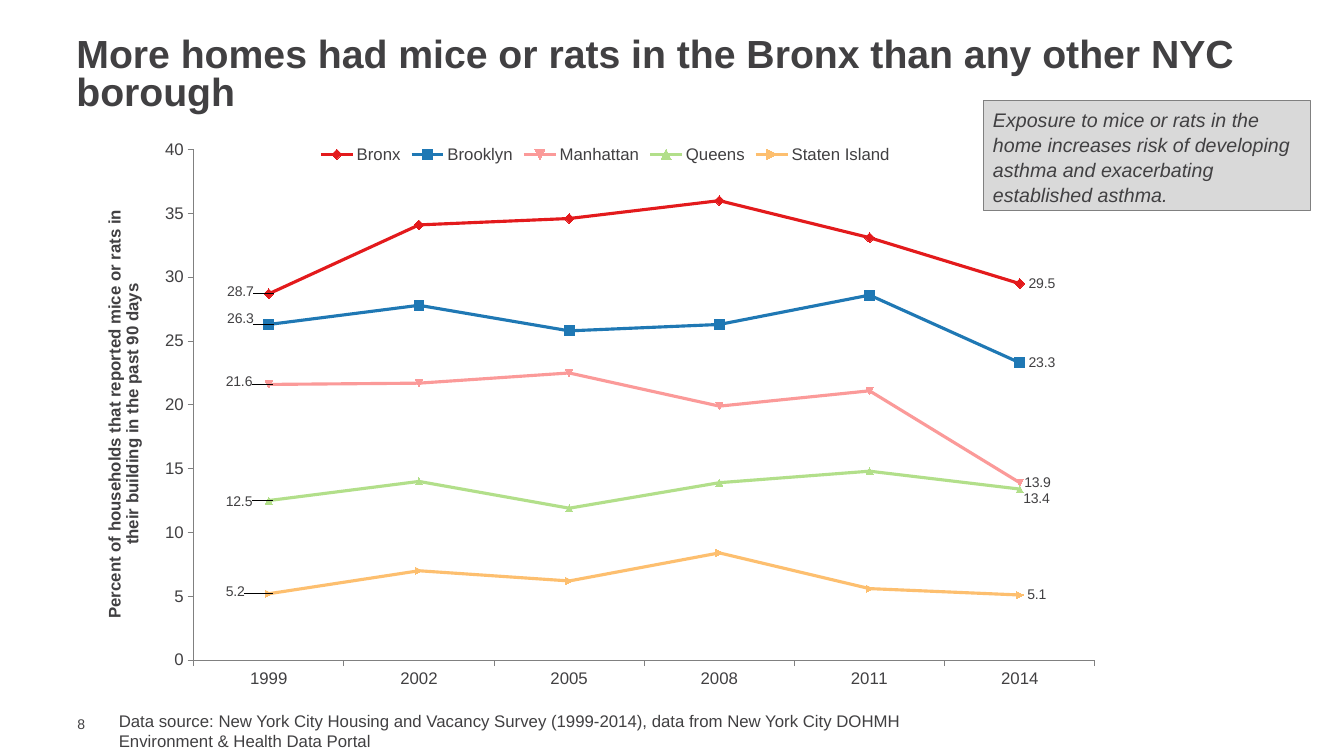
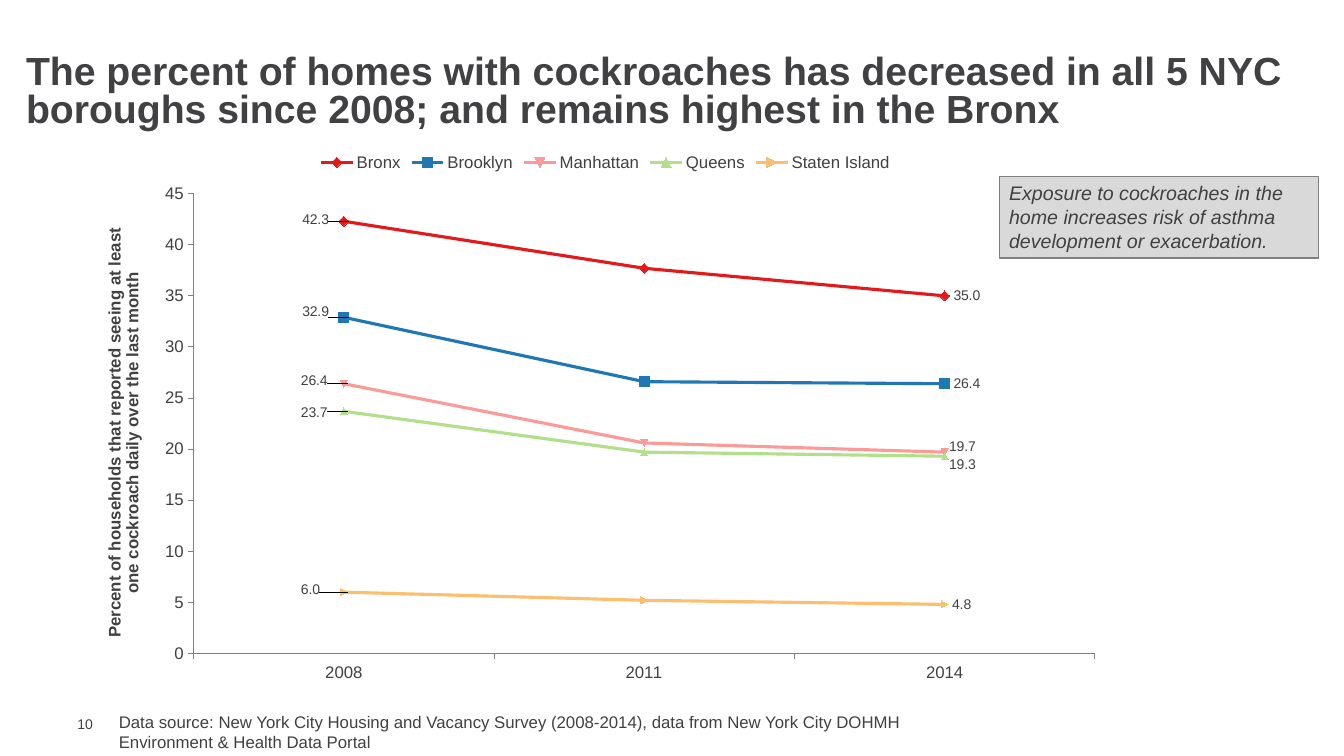
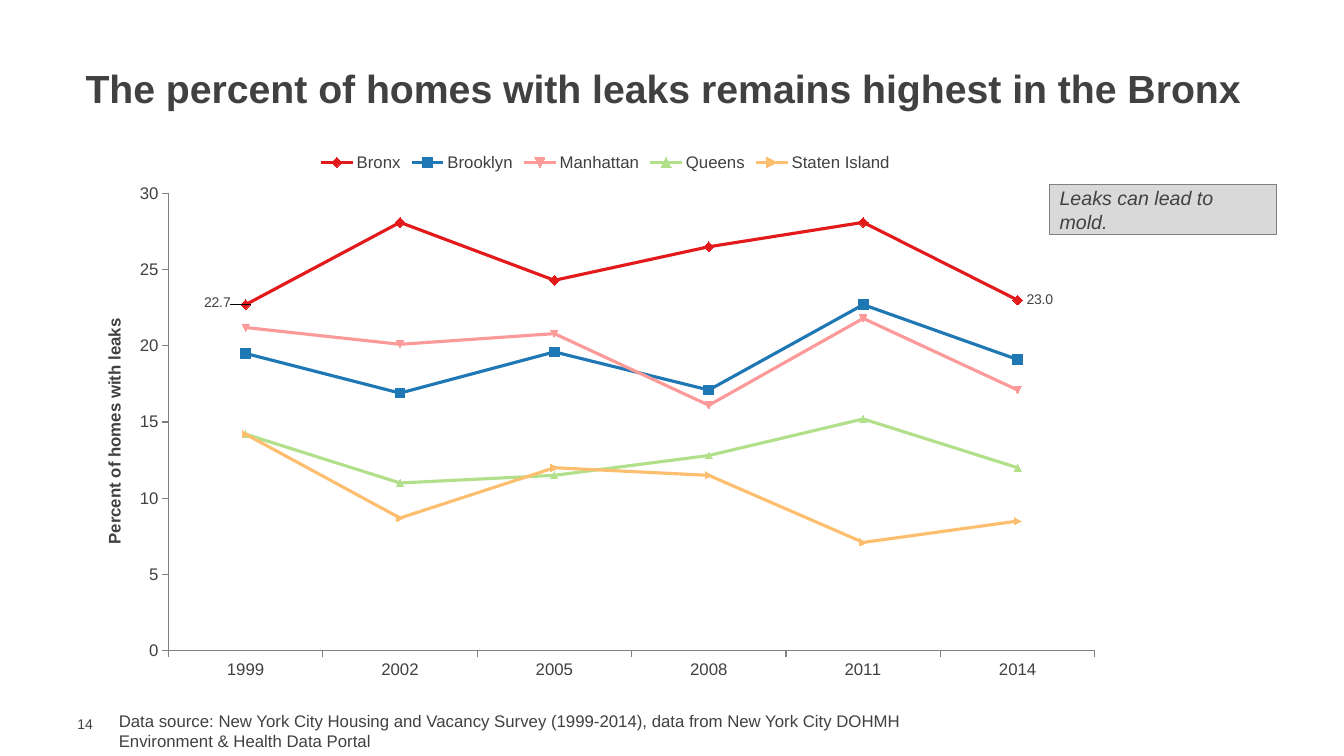
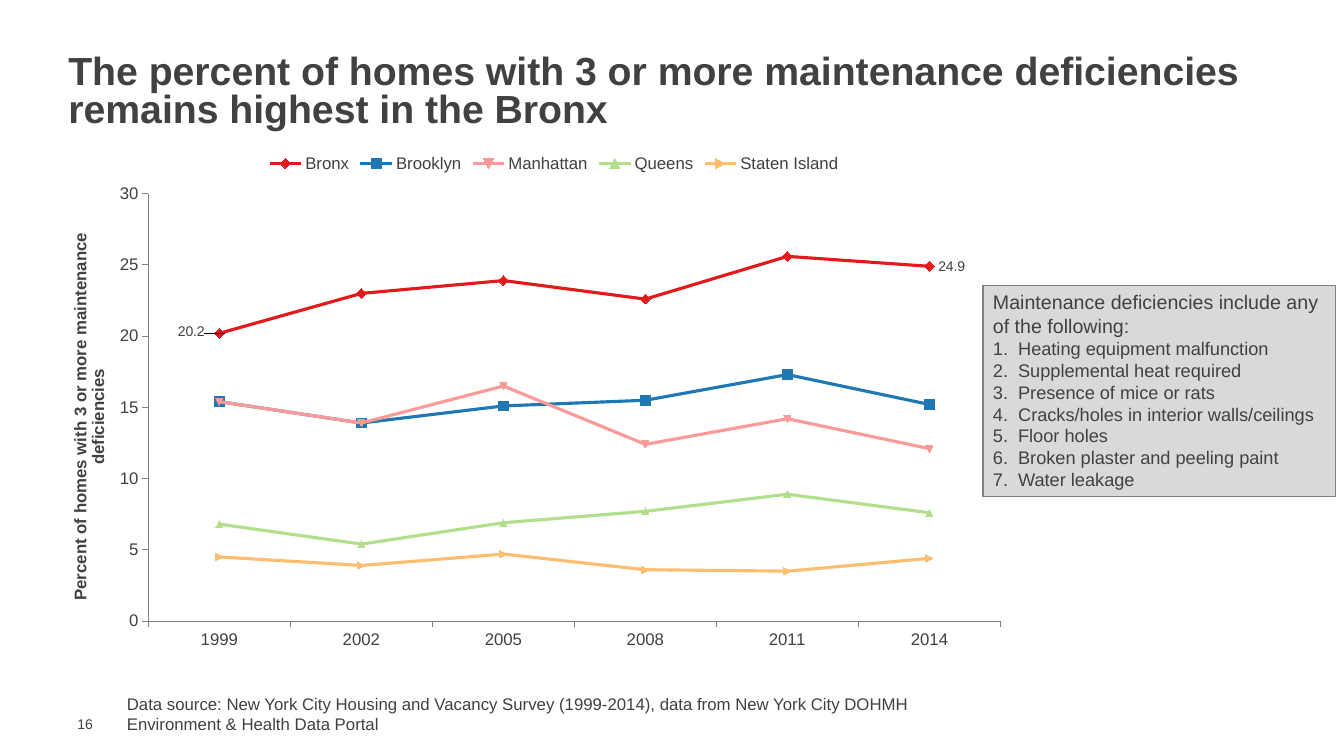
"""Build four line-chart slides on housing conditions in New York City boroughs."""
from dataclasses import dataclass
from typing import Any

import lxml.etree
import pptx
import pptx.chart.data
import pptx.dml.color
import pptx.enum.chart
import pptx.enum.shapes
import pptx.enum.text
import pptx.oxml
import pptx.oxml.ns
import pptx.util

EMU_PER_PX = 9144
FONT = "Arial"
TEXT = "414042"
PANEL = "D9D9D9"
RULE = "808080"
TOP = pptx.enum.text.MSO_ANCHOR.TOP
MIDDLE = pptx.enum.text.MSO_ANCHOR.MIDDLE
MARKER = pptx.enum.chart.XL_MARKER_STYLE
LONG_YEARS = ("1999", "2002", "2005", "2008", "2011", "2014")


@dataclass(frozen=True)
class Box:
    left: int
    top: int
    width: int
    height: int


@dataclass(frozen=True)
class Borough:
    name: str
    color: str
    marker: Any = MARKER.AUTOMATIC
    marker_size: int = 5


@dataclass(frozen=True)
class LabelShift:
    first_y: int = -2
    last_x: int = 0
    last_y: int = 0


@dataclass(frozen=True)
class LineChart:
    box: Box
    plot: tuple[float, float, float, float]
    axis_title: str
    maximum: int
    years: tuple[str, ...]
    values: tuple[tuple[float, ...], ...]
    labels: tuple[LabelShift, ...]


@dataclass(frozen=True)
class Callout:
    box: Box
    text: str
    items: tuple[str, ...] = ()
    italic: bool = True
    anchor: Any = TOP
    line_spacing: Any = None


@dataclass(frozen=True)
class Page:
    number: int
    title: str
    title_box: Box
    chart: LineChart
    source_box: Box
    callout: Callout


BOROUGHS = (
    Borough("Bronx", "E31A1C", MARKER.DIAMOND, 7),
    Borough("Brooklyn", "1F78B4", MARKER.SQUARE, 7),
    Borough("Manhattan", "FB9A99"),
    Borough("Queens", "B2DF8A"),
    Borough("Staten Island", "FDBF6F"),
)

PAGES = (
    Page(
        8,
        "More homes had mice or rats in the Bronx than any other NYC borough",
        Box(66, 33, 1217, 85),
        LineChart(
            Box(100, 133, 1001, 553),
            (0.092, 0.028, 0.893, 0.916),
            "Percent of households that reported mice or rats in their building in the past 90 days",
            40,
            LONG_YEARS,
            (
                (28.7, 34.1, 34.6, 36, 33.1, 29.5),
                (26.3, 27.8, 25.8, 26.3, 28.6, 23.3),
                (21.6, 21.7, 22.5, 19.9, 21.1, 13.9),
                (12.5, 14, 11.9, 13.9, 14.8, 13.4),
                (5.2, 7, 6.2, 8.4, 5.6, 5.1),
            ),
            (
                LabelShift(),
                LabelShift(-6),
                LabelShift(-3, -3, 0),
                LabelShift(1, -4, 10),
                LabelShift(),
            ),
        ),
        Box(108, 700, 992, 50),
        Callout(
            Box(975, 100, 325, 109),
            "Exposure to mice or rats in the home increases risk of developing asthma "
            "and exacerbating established asthma.",
            line_spacing=pptx.util.Pt(18),
        ),
    ),
    Page(
        10,
        "The percent of homes with cockroaches has decreased in all 5 NYC boroughs "
        "since 2008; and remains highest in the Bronx",
        Box(16, 50, 1317, 85),
        LineChart(
            Box(100, 141, 1001, 545),
            (0.092, 0.094, 0.893, 0.837),
            "Percent of households that reported seeing at least one cockroach daily over the last month",
            45,
            LONG_YEARS[3:],
            (
                (42.3, 37.7, 35),
                (32.9, 26.6, 26.4),
                (26.4, 20.6, 19.7),
                (23.7, 19.7, 19.3),
                (6, 5.2, 4.8),
            ),
            (
                LabelShift(),
                LabelShift(-6),
                LabelShift(-3, -3, -5),
                LabelShift(1, -3, 8),
                LabelShift(),
            ),
        ),
        Box(108, 701, 992, 50),
        Callout(
            Box(991, 175, 317, 81),
            "Exposure to cockroaches in the home increases risk of asthma "
            "development or exacerbation.",
        ),
    ),
    Page(
        14,
        "The percent of homes with leaks remains highest in the Bronx",
        Box(75, 67, 1317, 48),
        LineChart(
            Box(100, 141, 1001, 542),
            (0.067, 0.094, 0.918, 0.837),
            "Percent of homes with leaks",
            30,
            LONG_YEARS,
            (
                (22.7, 28.1, 24.3, 26.5, 28.1, 23),
                (19.5, 16.9, 19.6, 17.1, 22.7, 19.1),
                (21.2, 20.1, 20.8, 16.1, 21.8, 17.1),
                (14.2, 11, 11.5, 12.8, 15.2, 12),
                (14.2, 8.7, 12, 11.5, 7.1, 8.5),
            ),
            (LabelShift(),),
        ),
        Box(108, 700, 992, 50),
        Callout(Box(1041, 183, 225, 50), "Leaks can lead to mold.", anchor=MIDDLE),
    ),
    Page(
        16,
        "The percent of homes with 3 or more maintenance deficiencies remains highest in the Bronx",
        Box(58, 50, 1317, 85),
        LineChart(
            Box(66, 142, 967, 534),
            (0.084, 0.094, 0.874, 0.794),
            "Percent of homes with 3 or more maintenance deficiencies",
            30,
            LONG_YEARS,
            (
                (20.2, 23, 23.9, 22.6, 25.6, 24.9),
                (15.4, 13.9, 15.1, 15.5, 17.3, 15.2),
                (15.4, 13.9, 16.5, 12.4, 14.2, 12.1),
                (6.8, 5.4, 6.9, 7.7, 8.9, 7.6),
                (4.5, 3.9, 4.7, 3.6, 3.5, 4.4),
            ),
            (LabelShift(),),
        ),
        Box(116, 683, 1017, 50),
        Callout(
            Box(975, 283, 350, 210),
            "Maintenance deficiencies include any of the following:",
            (
                "Heating equipment malfunction",
                "Supplemental heat required",
                "Presence of mice or rats",
                "Cracks/holes in interior walls/ceilings",
                "Floor holes",
                "Broken plaster and peeling paint",
                "Water leakage",
            ),
            italic=False,
        ),
    ),
)


def px(length: int) -> pptx.util.Emu:
    return pptx.util.Emu(length * EMU_PER_PX)


def rgb(color: str) -> pptx.dml.color.RGBColor:
    return pptx.dml.color.RGBColor.from_string(color)


def place(box: Box) -> tuple[pptx.util.Emu, ...]:
    return px(box.left), px(box.top), px(box.width), px(box.height)


def apply_format(target: Any, values: dict[str, Any]) -> None:
    for name, value in values.items():
        setattr(target, name, value)


def style_font(font: Any, size: int, **values: Any) -> None:
    apply_format(font, {"name": FONT, "size": pptx.util.Pt(size), **values})
    font.color.rgb = rgb(TEXT)


def style_line(line: Any, color: str, width: float) -> None:
    line.color.rgb = rgb(color)
    line.width = pptx.util.Pt(width)


def add_paragraph(frame: Any, text: str, size: int, **values: Any) -> Any:
    paragraph = frame.add_paragraph() if frame.text else frame.paragraphs[0]
    paragraph.alignment = pptx.enum.text.PP_ALIGN.LEFT
    run = paragraph.add_run()
    run.text = text
    style_font(run.font, size, **values)
    return paragraph


def add_text_box(slide: Any, box: Box, **values: Any) -> Any:
    frame = slide.shapes.add_textbox(*place(box)).text_frame
    apply_format(frame, {"word_wrap": True, **values})
    return frame


def add_callout(slide: Any, callout: Callout) -> None:
    shape = slide.shapes.add_shape(
        pptx.enum.shapes.MSO_SHAPE.RECTANGLE, *place(callout.box)
    )
    shape.shadow.inherit = False
    shape.fill.solid()
    shape.fill.fore_color.rgb = rgb(PANEL)
    style_line(shape.line, RULE, 0.75)
    frame = shape.text_frame
    apply_format(frame, {"word_wrap": True, "vertical_anchor": callout.anchor})
    paragraph = add_paragraph(frame, callout.text, 14, italic=callout.italic)
    paragraph.line_spacing = callout.line_spacing
    for item in callout.items:
        properties = add_paragraph(frame, item, 13)._p.get_or_add_pPr()
        properties.set("marL", str(px(25)))
        properties.set("indent", str(px(-25)))
        number = lxml.etree.SubElement(properties, pptx.oxml.ns.qn("a:buAutoNum"))
        number.set("type", "arabicPeriod")


def manual_layout(**values: Any) -> Any:
    settings = "".join(f'<c:{name} val="{value}"/>' for name, value in values.items())
    return pptx.oxml.parse_xml(
        f"<c:layout {pptx.oxml.ns.nsdecls('c')}>"
        f"<c:manualLayout>{settings}</c:manualLayout></c:layout>"
    )


def place_plot(chart: Any, plot: tuple[float, float, float, float]) -> None:
    area = chart._chartSpace.chart.plotArea
    for layout in area.findall(pptx.oxml.ns.qn("c:layout")):
        area.remove(layout)
    x, y, width, height = plot
    area.insert(
        0,
        manual_layout(
            layoutTarget="inner", xMode="edge", yMode="edge", x=x, y=y, w=width, h=height
        ),
    )


def add_label(series: Any, index: int, shift_x: int, shift_y: int, box: Box) -> None:
    label = series.points[index].data_label
    style_font(label.font, 10)
    label.position = pptx.enum.chart.XL_LABEL_POSITION.RIGHT
    if shift_x or shift_y:
        position = series._element.xpath(f"c:dLbls/c:dLbl/c:idx[@val='{index}']")[0]
        position.addnext(
            manual_layout(
                x=round(shift_x / box.width, 4), y=round(shift_y / box.height, 4)
            )
        )


def style_series(series: Any, borough: Borough) -> None:
    series.smooth = False
    style_line(series.format.line, borough.color, 2.25)
    apply_format(series.marker, {"style": borough.marker, "size": borough.marker_size})
    series.marker.format.fill.solid()
    series.marker.format.fill.fore_color.rgb = rgb(borough.color)
    style_line(series.marker.format.line, borough.color, 0.75)


def style_axes(chart: Any, content: LineChart) -> None:
    for axis in (chart.category_axis, chart.value_axis):
        apply_format(
            axis,
            {
                "has_major_gridlines": False,
                "major_tick_mark": pptx.enum.chart.XL_TICK_MARK.OUTSIDE,
                "minor_tick_mark": pptx.enum.chart.XL_TICK_MARK.NONE,
            },
        )
        style_font(axis.tick_labels.font, 12)
        style_line(axis.format.line, RULE, 0.75)
    axis = chart.value_axis
    apply_format(
        axis, {"minimum_scale": 0, "maximum_scale": content.maximum, "major_unit": 5}
    )
    apply_format(
        axis.tick_labels, {"number_format": "#,##0", "number_format_is_linked": False}
    )
    frame = axis.axis_title.text_frame
    run = frame.paragraphs[0].add_run()
    run.text = content.axis_title
    style_font(run.font, 12, bold=True)
    body = frame._txBody.find(pptx.oxml.ns.qn("a:bodyPr"))
    body.set("rot", "-5400000")
    body.set("vert", "horz")


def add_line_chart(slide: Any, content: LineChart) -> None:
    data = pptx.chart.data.CategoryChartData(number_format="0.0")
    data.categories = content.years
    for borough, values in zip(BOROUGHS, content.values):
        data.add_series(borough.name, values)
    chart = slide.shapes.add_chart(
        pptx.enum.chart.XL_CHART_TYPE.LINE_MARKERS, *place(content.box), data
    ).chart
    style_font(chart.font, 10)
    apply_format(chart, {"has_title": False, "has_legend": True})
    apply_format(
        chart.legend,
        {
            "position": pptx.enum.chart.XL_LEGEND_POSITION.TOP,
            "include_in_layout": False,
        },
    )
    style_font(chart.legend.font, 12)
    chart.plots[0].vary_by_categories = False
    style_axes(chart, content)
    place_plot(chart, content.plot)
    for series, borough in zip(chart.plots[0].series, BOROUGHS):
        style_series(series, borough)
    last = len(content.years) - 1
    for series, shift in zip(chart.plots[0].series, content.labels):
        series.data_labels.show_value = False
        add_label(series, 0, -50, shift.first_y, content.box)
        add_label(series, last, shift.last_x, shift.last_y, content.box)


def add_page(presentation: Any, page: Page) -> None:
    slide = presentation.slides.add_slide(presentation.slide_layouts[6])
    number = add_text_box(
        slide,
        Box(67, 710, 43, 17),
        vertical_anchor=MIDDLE,
        margin_left=px(10),
        margin_top=0,
        margin_right=0,
        margin_bottom=0,
    )
    add_paragraph(number, str(page.number), 10)
    title = add_text_box(slide, page.title_box, vertical_anchor=MIDDLE)
    add_paragraph(title, page.title, 28, bold=True).line_spacing = 0.8
    add_line_chart(slide, page.chart)
    source = add_text_box(slide, page.source_box)
    years = page.chart.years
    add_paragraph(
        source,
        f"Data source: New York City Housing and Vacancy Survey ({years[0]}-{years[-1]}), "
        "data from New York City DOHMH",
        12,
    )
    add_paragraph(source, "Environment & Health Data Portal", 12)
    add_callout(slide, page.callout)


def main() -> None:
    presentation = pptx.Presentation()
    apply_format(presentation, {"slide_width": px(1333), "slide_height": px(750)})
    for page in PAGES:
        add_page(presentation, page)
    presentation.save("out.pptx")


if __name__ == "__main__":
    main()
